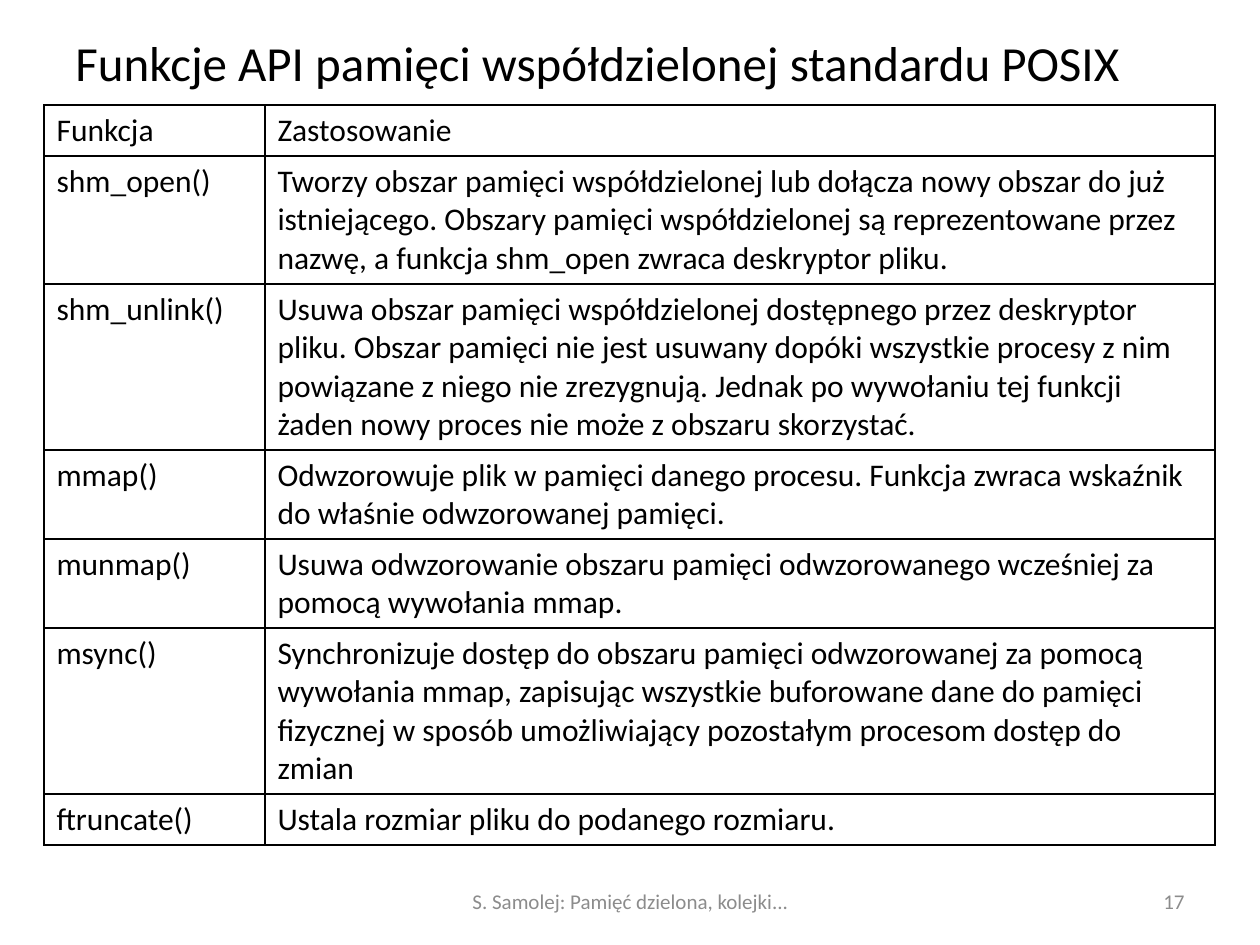
from lxml import etree
from pptx import Presentation
from pptx.dml.color import RGBColor
from pptx.enum.text import MSO_ANCHOR, PP_ALIGN
from pptx.oxml.ns import qn
from pptx.util import Pt

PX = 914400 // 126
BLACK = RGBColor(0x00, 0x00, 0x00)
GREY = RGBColor(0x8C, 0x8C, 0x8C)
LEFT, MID, RIGHT = PP_ALIGN.LEFT, PP_ALIGN.CENTER, PP_ALIGN.RIGHT
MIDDLE = MSO_ANCHOR.MIDDLE
FONT = "Calibri"

# text, box (left, top, width, height), size, colour, alignment
LABELS = [
    ("Funkcje API pamięci współdzielonej standardu POSIX",
     (63, 38, 1143, 48), 28, BLACK, LEFT),
    ("S. Samolej: Pamięć dzielona, kolejki...",
     (431, 876, 399, 50), 12, GREY, MID),
    ("17", (903, 876, 294, 50), 12, GREY, RIGHT),
]

# function, use, row height
ROWS = [
    ("Funkcja", "Zastosowanie", 51),
    ("shm_open()",
     "Tworzy obszar pamięci współdzielonej lub dołącza nowy obszar do już "
     "istniejącego. Obszary pamięci współdzielonej są reprezentowane przez "
     "nazwę, a funkcja shm_open zwraca deskryptor pliku.", 128),
    ("shm_unlink()",
     "Usuwa obszar pamięci współdzielonej dostępnego przez deskryptor "
     "pliku. Obszar pamięci nie jest usuwany dopóki wszystkie procesy z nim "
     "powiązane z niego nie zrezygnują. Jednak po wywołaniu tej funkcji "
     "żaden nowy proces nie może z obszaru skorzystać.", 166),
    ("mmap()",
     "Odwzorowuje plik w pamięci danego procesu. Funkcja zwraca wskaźnik "
     "do właśnie odwzorowanej pamięci.", 89),
    ("munmap()",
     "Usuwa odwzorowanie obszaru pamięci odwzorowanego wcześniej za "
     "pomocą wywołania mmap.", 89),
    ("msync()",
     "Synchronizuje dostęp do obszaru pamięci odwzorowanej za pomocą "
     "wywołania mmap, zapisując wszystkie buforowane dane do pamięci "
     "fizycznej w sposób umożliwiający pozostałym procesom dostęp do "
     "zmian", 166),
    ("ftruncate()", "Ustala rozmiar pliku do podanego rozmiaru.", 51),
]
COLS = (221, 950)
LEFT_TOP = (44, 105)


def write(frame, text, size, color, align=LEFT):
    frame.text = text
    para = frame.paragraphs[0]
    para.alignment = align
    font = para.runs[0].font
    font.name, font.size = FONT, Pt(size)
    font.color.rgb = color


def add_label(slide, text, box, size, color, align):
    frame = slide.shapes.add_textbox(*(n * PX for n in box)).text_frame
    frame.word_wrap = True
    frame.vertical_anchor = MIDDLE
    write(frame, text, size, color, align)


def add_borders(cell):
    """Draw a thin black line on each side; must run before the fill is set."""
    props = cell._tc.get_or_add_tcPr()
    for side in ("lnL", "lnR", "lnT", "lnB"):
        line = etree.SubElement(props, qn(f"a:{side}"), w=str(Pt(1)))
        fill = etree.SubElement(line, qn("a:solidFill"))
        etree.SubElement(fill, qn("a:srgbClr"), val=str(BLACK))


def add_grid(slide):
    size = (sum(COLS), sum(row[-1] for row in ROWS))
    box = (n * PX for n in LEFT_TOP + size)
    table = slide.shapes.add_table(len(ROWS), len(COLS), *box).table
    table.first_row = table.horz_banding = False
    for col, width in zip(table.columns, COLS):
        col.width = width * PX
    for r, (*texts, height) in enumerate(ROWS):
        table.rows[r].height = height * PX
        for c, text in enumerate(texts):
            cell = table.cell(r, c)
            write(cell.text_frame, text, 18, BLACK)
            add_borders(cell)
            cell.fill.background()


def main():
    deck = Presentation()
    deck.slide_width, deck.slide_height = 1260 * PX, 945 * PX
    slide = deck.slides.add_slide(deck.slide_layouts[6])
    for label in LABELS:
        add_label(slide, *label)
    add_grid(slide)
    deck.save("out.pptx")


if __name__ == "__main__":
    main()
